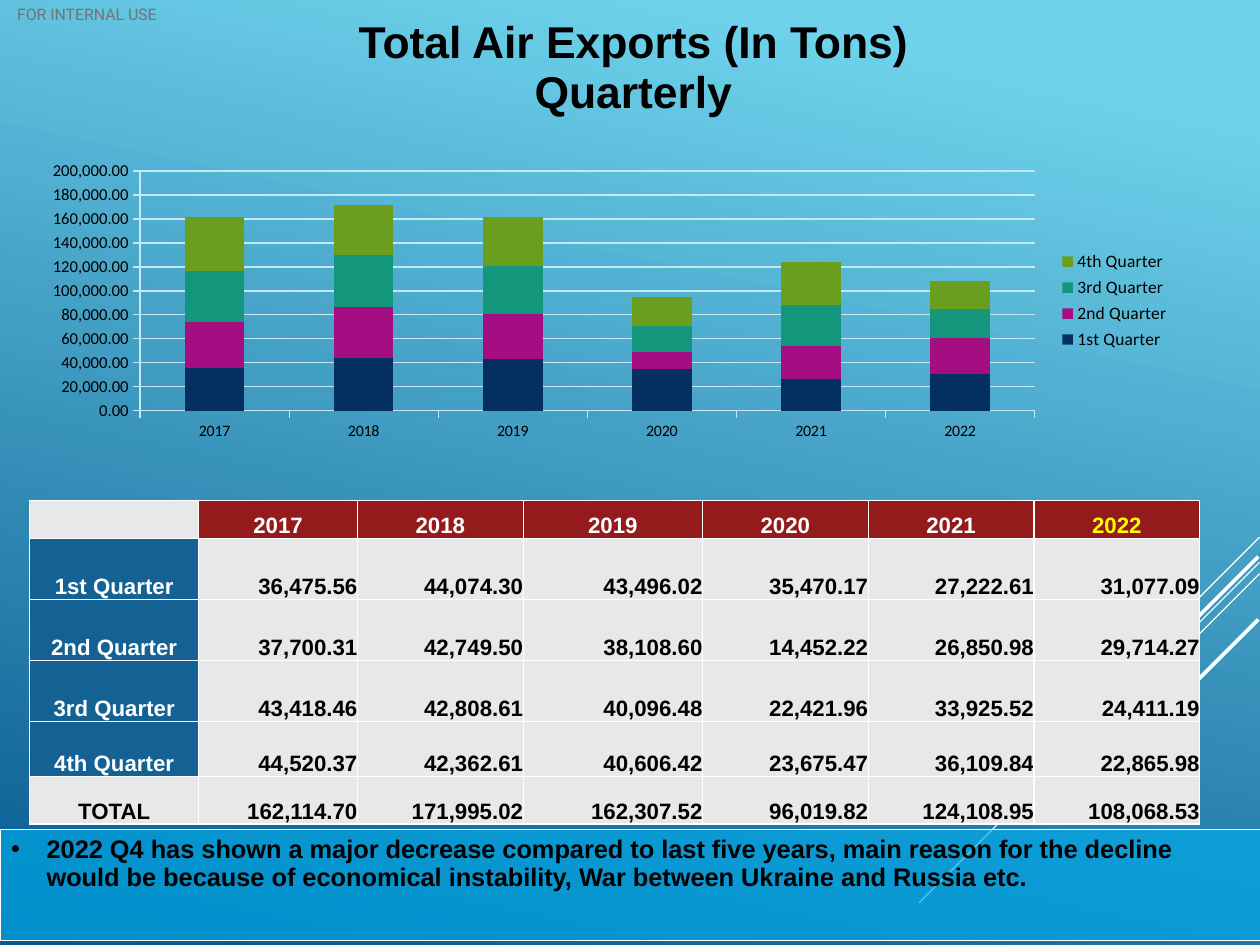
import dataclasses

import lxml.etree
import pptx
import pptx.chart.data
import pptx.dml.color
import pptx.enum.chart
import pptx.enum.shapes
import pptx.enum.text
import pptx.oxml.ns
import pptx.util

Pt = pptx.util.Pt
ALIGN = pptx.enum.text.PP_ALIGN
ANCHOR = pptx.enum.text.MSO_ANCHOR

YEARS = ["2017", "2018", "2019", "2020", "2021", "2022"]
QUARTERS = {
    "1st Quarter": [36475.56, 44074.30, 43496.02, 35470.17, 27222.61, 31077.09],
    "2nd Quarter": [37700.31, 42749.50, 38108.60, 14452.22, 26850.98, 29714.27],
    "3rd Quarter": [43418.46, 42808.61, 40096.48, 22421.96, 33925.52, 24411.19],
    "4th Quarter": [44520.37, 42362.61, 40606.42, 23675.47, 36109.84, 22865.98],
}
NOTE = (
    "2022 Q4 has shown a major decrease compared to last five years, main reason for the decline "
    "would be because of economical instability, War between Ukraine and Russia etc."
)
# Right end, top and run of each 45-degree stripe, then its line width
STRIPES = [
    (793.5, 338.4, 65.5, 0.75),
    (793.5, 354.2, 214.6, 0.75),
    (793.5, 361.4, 136, 0.75),
    (792.7, 350.6, 124.8, 2.25),
    (792.7, 390.2, 90.8, 2.25),
]


@dataclasses.dataclass(frozen=True)
class Theme:
    sky: str = "6ED2EB"
    deep: str = "06588E"
    white: str = "FFFFFF"
    black: str = "000000"
    label_grey: str = "747474"
    note_blue: str = "00B0F0"
    header_red: str = "941A1B"
    quarter_blue: str = "146194"
    cell_grey: str = "E7E8EA"
    highlight: str = "FFFF00"
    gridline: str = "C4E9F4"
    series: tuple = ("052F61", "A50E82", "14967C", "6A9E1F")
    font: str = "Arial"
    label_font: str = "Roboto"
    chart_font: str = "Calibri"
    title_size: float = 28
    note_size: float = 16
    table_size: float = 14
    label_size: float = 10
    category_size: float = 10
    value_size: float = 10.5
    legend_size: float = 11
    line_spacing: float = 0.93


def rgb(color):
    return pptx.dml.color.RGBColor.from_string(color)


def add_node(parent, tag, **attributes):
    return lxml.etree.SubElement(parent, pptx.oxml.ns.qn(tag), attributes)


class SlideBuilder:
    def __init__(self, slide, theme):
        self.slide = slide
        self.theme = theme

    def background(self):
        fill = self.slide.background.fill
        fill.gradient()
        fill.gradient_angle = 258
        stops = [(0.1, self.theme.sky), (1, self.theme.deep)]
        for stop, (position, color) in zip(fill.gradient_stops, stops):
            stop.position = position
            stop.color.rgb = rgb(color)

    def style_font(self, font, size, color, name, bold=False):
        font.size = Pt(size)
        font.name = name
        font.bold = bold
        font.color.rgb = rgb(color)

    def paragraph(self, para, text, size, color, align=ALIGN.CENTER, name=None, bold=True):
        para.text = text
        para.alignment = align
        para.line_spacing = self.theme.line_spacing
        self.style_font(para.font, size, color, name or self.theme.font, bold)

    def stripe(self, right, top, run, width):
        line = self.slide.shapes.add_connector(
            pptx.enum.shapes.MSO_CONNECTOR.STRAIGHT,
            Pt(right), Pt(top), Pt(right - run), Pt(top + run))
        self.outline(line.line, width)
        add_node(line.element.spPr, "a:effectLst")

    def outline(self, line, width=0.75, color=None):
        line.color.rgb = rgb(color or self.theme.white)
        line.width = Pt(width)

    def text(self, left, top, width, height, lines, size, color, **style):
        box = self.slide.shapes.add_textbox(Pt(left), Pt(top), Pt(width), Pt(height))
        frame = box.text_frame
        frame.word_wrap = True
        frame.vertical_anchor = ANCHOR.MIDDLE
        frame.margin_left = frame.margin_right = frame.margin_top = frame.margin_bottom = 0
        for index, line in enumerate(lines):
            para = frame.add_paragraph() if index else frame.paragraphs[0]
            self.paragraph(para, line, size, color, **style)

    def note(self, left, top, width, height, text):
        """Add a translucent panel holding one bulleted paragraph."""
        theme = self.theme
        panel = self.slide.shapes.add_shape(
            pptx.enum.shapes.MSO_SHAPE.RECTANGLE, Pt(left), Pt(top), Pt(width), Pt(height))
        panel.shadow.inherit = False
        panel.fill.solid()
        panel.fill.fore_color.rgb = rgb(theme.note_blue)
        add_node(panel.element.xpath("p:spPr/a:solidFill/a:srgbClr")[0], "a:alpha", val="63000")
        self.outline(panel.line)
        frame = panel.text_frame
        frame.word_wrap = True
        frame.vertical_anchor = ANCHOR.TOP
        para = frame.paragraphs[0]
        self.paragraph(para, text, theme.note_size, theme.black, ALIGN.LEFT)
        properties = para._p.get_or_add_pPr()
        indent = Pt(22.3)
        properties.set("marL", str(indent))
        properties.set("indent", str(-indent))
        add_node(add_node(properties, "a:buClr"), "a:srgbClr", val=theme.black)
        add_node(properties, "a:buFont", typeface=theme.font)
        add_node(properties, "a:buChar", char="•")

    def cell(self, cell, text, fill, color, align):
        cell.margin_left = cell.margin_right = cell.margin_top = cell.margin_bottom = 0
        cell.vertical_anchor = ANCHOR.BOTTOM
        properties = cell._tc.get_or_add_tcPr()
        for side in ("a:lnL", "a:lnR", "a:lnT", "a:lnB"):
            border = add_node(properties, side, w=str(Pt(1)))
            add_node(add_node(border, "a:solidFill"), "a:srgbClr", val=self.theme.white)
        cell.fill.solid()
        cell.fill.fore_color.rgb = rgb(fill)
        self.paragraph(cell.text_frame.paragraphs[0], text, self.theme.table_size, color, align)

    def table(self, left, top, widths, heights, rows):
        theme = self.theme
        table = self.slide.shapes.add_table(
            len(heights), len(widths), Pt(left), Pt(top), Pt(sum(widths)), Pt(sum(heights))).table
        for column, width in zip(table.columns, widths):
            column.width = Pt(width)
        for row, height in zip(table.rows, heights):
            row.height = Pt(height)
        last_row, last_column = len(rows) - 1, len(widths) - 1
        for r, row in enumerate(rows):
            for c, text in enumerate(row):
                fill, color = theme.cell_grey, theme.black
                if r == 0 and c > 0:
                    fill = theme.header_red
                    color = theme.highlight if c == last_column else theme.white
                elif c == 0 and 0 < r < last_row:
                    fill, color = theme.quarter_blue, theme.white
                align = ALIGN.RIGHT if r and c else ALIGN.CENTER
                self.cell(table.cell(r, c), text, fill, color, align)

    def chart(self, left, top, width, height, categories, series):
        theme = self.theme
        data = pptx.chart.data.CategoryChartData(number_format="#,##0.00")
        data.categories = categories
        for name, values in series.items():
            data.add_series(name, values)
        chart = self.slide.shapes.add_chart(
            pptx.enum.chart.XL_CHART_TYPE.COLUMN_STACKED,
            Pt(left), Pt(top), Pt(width), Pt(height), data).chart
        self.style_font(chart.font, theme.category_size, theme.black, theme.chart_font)
        chart.has_title = False
        chart.has_legend = True
        chart.legend.position = pptx.enum.chart.XL_LEGEND_POSITION.RIGHT
        chart.legend.include_in_layout = False
        self.style_font(chart.legend.font, theme.legend_size, theme.black, theme.chart_font)
        plot = chart.plots[0]
        plot.gap_width, plot.overlap = 150, 100
        plot.vary_by_categories = False
        for bars, color in zip(plot.series, theme.series):
            bars.format.fill.solid()
            bars.format.fill.fore_color.rgb = rgb(color)
        value_axis = chart.value_axis
        value_axis.minimum_scale, value_axis.maximum_scale = 0, 200000
        value_axis.major_unit = 20000
        value_axis.has_major_gridlines = True
        self.outline(value_axis.major_gridlines.format.line, color=theme.gridline)
        value_axis.tick_labels.number_format = "#,##0.00"
        value_axis.tick_labels.number_format_is_linked = False
        for axis, size in ((chart.category_axis, theme.category_size), (value_axis, theme.value_size)):
            axis.major_tick_mark = pptx.enum.chart.XL_TICK_MARK.OUTSIDE
            self.outline(axis.format.line, color=theme.gridline)
            self.style_font(axis.tick_labels.font, size, theme.black, theme.chart_font)
        self.place_plot(chart, x=69.5 / width, y=9.8 / height, w=563.6 / width, h=151.2 / height)

    def place_plot(self, chart, **fractions):
        """Fix the inner plot area as fractions of the chart frame."""
        area = chart.element.xpath("c:chart/c:plotArea")[0]
        for layout in area.xpath("c:layout"):
            area.remove(layout)
        layout = add_node(area, "c:layout")
        area.insert(0, layout)
        manual = add_node(layout, "c:manualLayout")
        add_node(manual, "c:layoutTarget", val="inner")
        for axis in "xy":
            add_node(manual, f"c:{axis}Mode", val="edge")
        for key, fraction in fractions.items():
            add_node(manual, f"c:{key}", val=str(fraction))


def main():
    deck = pptx.Presentation()
    deck.slide_width, deck.slide_height = Pt(793.75), Pt(595.25)
    theme = Theme()
    page = SlideBuilder(deck.slides.add_slide(deck.slide_layouts[6]), theme)
    page.background()
    for stripe in STRIPES:
        page.stripe(*stripe)
    page.text(0, 0, 109.4, 18.7, ["FOR INTERNAL USE"], theme.label_size, theme.label_grey,
              name=theme.label_font, bold=False)
    page.text(41.8, 19, 714.2, 48.2, ["Total Air Exports (In Tons)", "Quarterly"],
              theme.title_size, theme.black)
    page.note(0, 522.7, 796.3, 69.8, NOTE)
    totals = [sum(year) for year in zip(*QUARTERS.values())]
    figures = {**QUARTERS, "TOTAL": totals}
    rows = [["", *YEARS]]
    rows += [[name, *(f"{value:,.2f}" for value in values)] for name, values in figures.items()]
    page.table(18.7, 315.4, [106.5, 100, 104.4, 113, 104.4, 104.4, 104.4],
               [23.8, 38.4, 38.4, 38.4, 34.7, 30], rows)
    rounded = {name: [round(value, -3) for value in values] for name, values in QUARTERS.items()}
    page.chart(18.7, 97.9, 725.8, 182.9, YEARS, rounded)
    deck.save("out.pptx")


if __name__ == "__main__":
    main()
